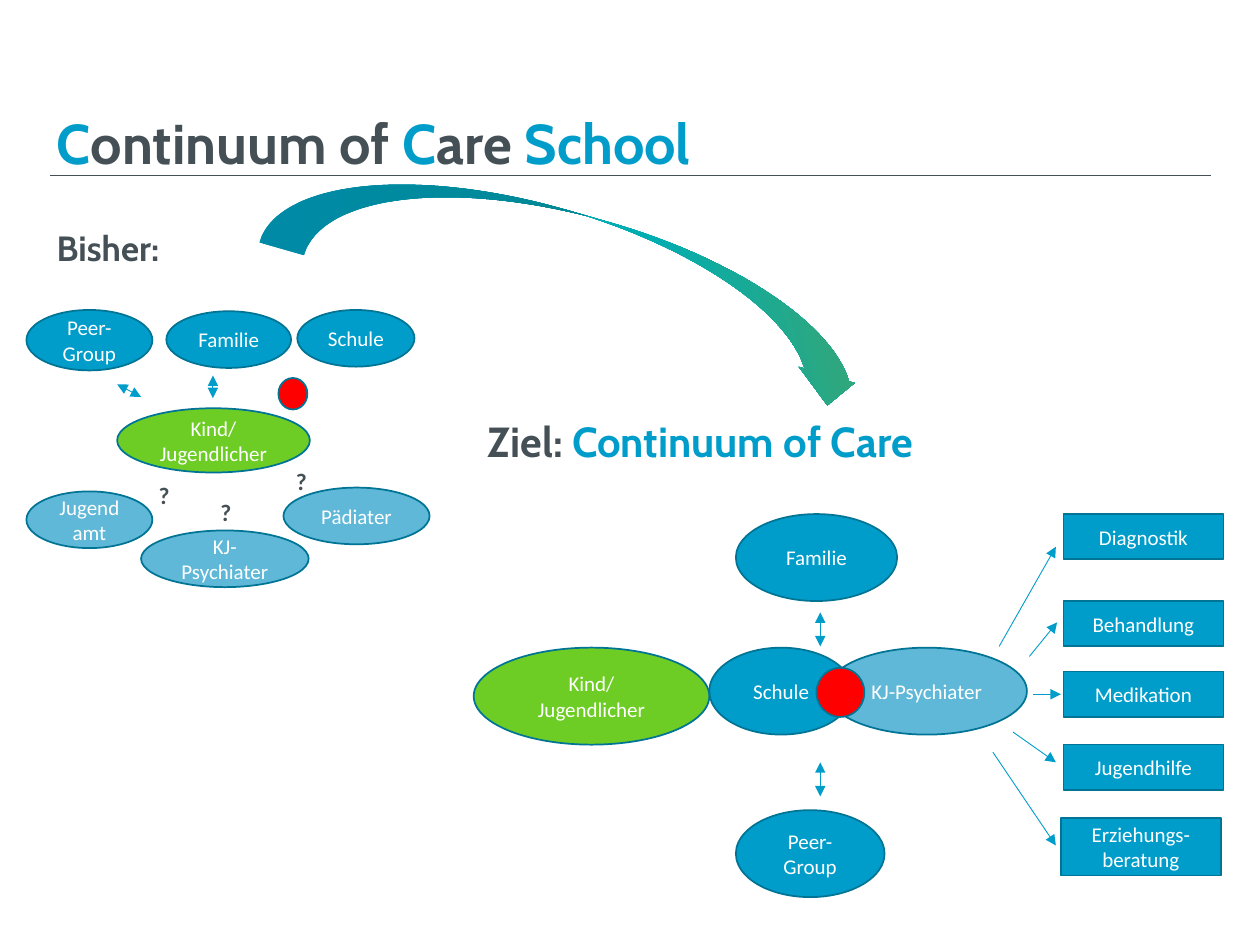
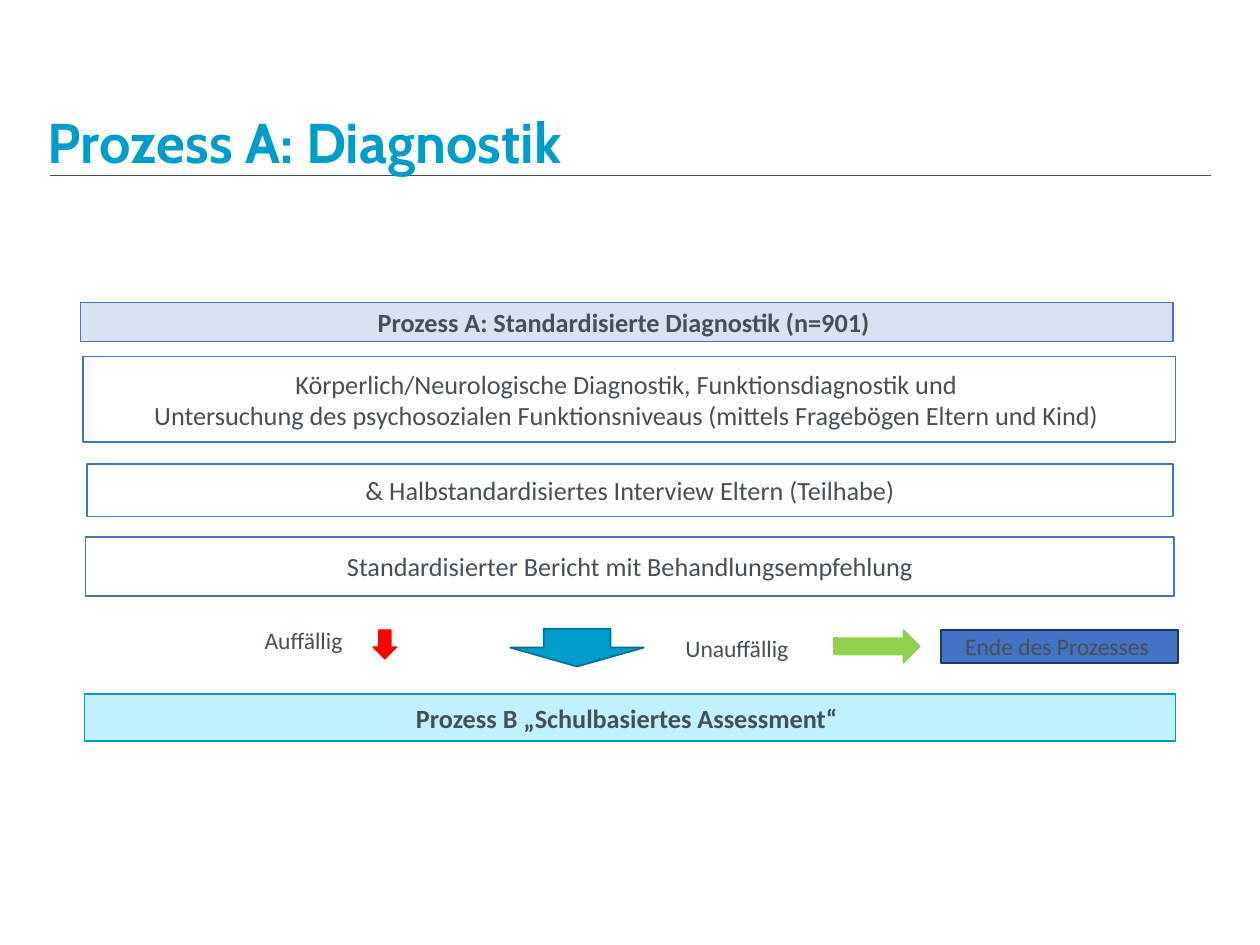
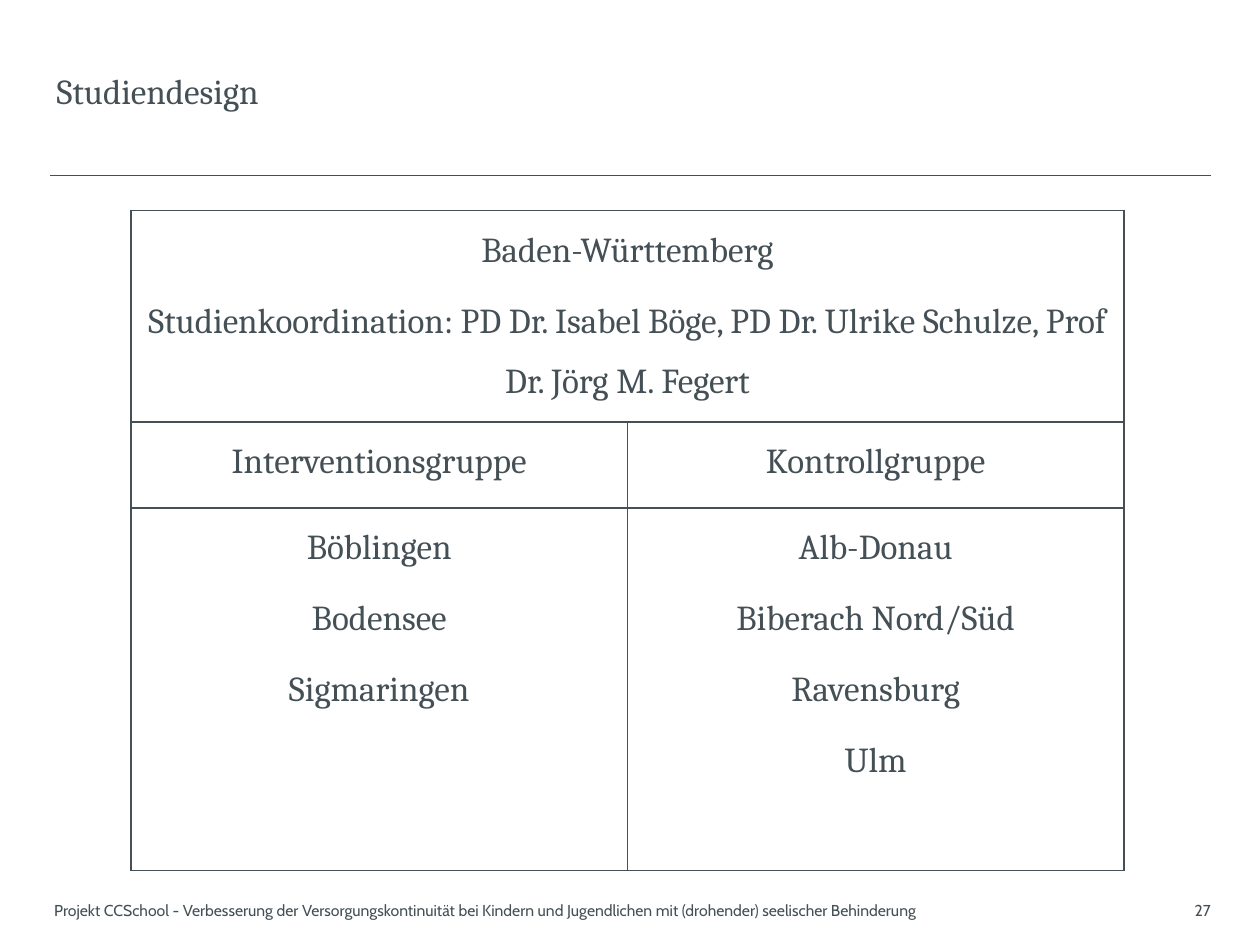
from lxml.etree import SubElement
from pptx import Presentation
from pptx.dml.color import RGBColor
from pptx.enum.shapes import MSO_CONNECTOR, MSO_SHAPE
from pptx.enum.text import MSO_ANCHOR, PP_ALIGN
from pptx.oxml.ns import qn
from pptx.util import Inches, Pt

COLORS = {
    "ink": "445055", "blue": "009DCA", "edge": "007495", "sky": "5FB8D7",
    "green": "6DCD25", "red": "FF0000", "white": "FFFFFF", "royal": "4472C4",
    "navy": "1F3763", "pale": "D9E2F3", "ice": "C1F1FF", "lime": "92D050",
}
SWEEP = [(0, "00ADD4"), (39, "00ADC3"), (62, "00ADB1"), (86, "31A77C"), (100, "61A047")]
HEAD, BODY, SERIF = "Cabin", "Calibri", "Cambria"
PAD = (0.1, 0.05, 0.1, 0.05)
FLUSH = (0, 0.05, 0, 0.05)
SNUG = (0.07, 0.04, 0.07, 0.04)
CELL = (0.07, 0, 0.07, 0)


def rgb(name):
    return RGBColor.from_string(COLORS[name])


class Deck:
    """Holds the shared style and the current slide."""

    def __init__(self):
        self.prs = Presentation()
        self.prs.slide_width, self.prs.slide_height = Inches(10), Inches(7.5)
        self.slide = None

    def new_slide(self):
        self.slide = self.prs.slides.add_slide(self.prs.slide_layouts[6])
        self.line((0.4, 1.39), (9.61, 1.39), "ink")

    def add_paras(self, tf, paras, size, font=BODY, color="ink", bold=False,
                  align=PP_ALIGN.LEFT, spacing=None, gap=0):
        for i, para in enumerate(paras):
            p = tf.paragraphs[0] if i == 0 else tf.add_paragraph()
            p.alignment = align
            if spacing:
                p.line_spacing = spacing
            if gap:
                p.space_after = Pt(gap)
                if i:
                    p.space_before = Pt(gap)
            for text, tint in [(para, color)] if isinstance(para, str) else para:
                r = p.add_run()
                r.text = text
                r.font.size, r.font.name, r.font.bold = Pt(size), font, bold
                r.font.color.rgb = rgb(tint)

    def frame(self, tf, inset, anchor):
        tf.word_wrap = True
        tf.vertical_anchor = anchor
        tf.margin_left, tf.margin_top, tf.margin_right, tf.margin_bottom = map(Inches, inset)

    def text(self, box, paras, size, inset=FLUSH, anchor=MSO_ANCHOR.TOP, **style):
        tf = self.slide.shapes.add_textbox(*map(Inches, box)).text_frame
        self.frame(tf, inset, anchor)
        self.add_paras(tf, paras, size, **style)

    def shape(self, kind, box, fill, edge=None, paras=(), size=12, inset=PAD,
              anchor=MSO_ANCHOR.MIDDLE, weight=1, align=PP_ALIGN.CENTER, **style):
        sp = self.slide.shapes.add_shape(kind, *map(Inches, box))
        sp.shadow.inherit = False
        sp.fill.solid()
        sp.fill.fore_color.rgb = rgb(fill)
        if edge:
            sp.line.color.rgb, sp.line.width = rgb(edge), Pt(weight)
        else:
            sp.line.fill.background()
        self.frame(sp.text_frame, inset, anchor)
        self.add_paras(sp.text_frame, paras, size, align=align, **style)
        return sp

    def node(self, box, fill, *paras, kind=MSO_SHAPE.OVAL):
        self.shape(kind, box, fill, "edge", paras, color="white")

    def step(self, box, fill, edge, *paras, size=15, bold=False):
        self.shape(MSO_SHAPE.FLOWCHART_PROCESS, box, fill, edge, paras, size, SNUG, bold=bold)

    def line(self, start, end, color="blue", ends=()):
        ln = self.slide.shapes.add_connector(
            MSO_CONNECTOR.STRAIGHT, *map(Inches, (*start, *end)))
        ln.line.color.rgb, ln.line.width = rgb(color), Pt(0.5)
        spPr = ln._element.spPr
        for end_tag in ends:
            SubElement(spPr.find(qn("a:ln")), qn(f"a:{end_tag}"), type="triangle")
        SubElement(spPr, qn("a:effectLst"))

    def arrow(self, start, end):
        self.line(start, end, ends=("tailEnd",))

    def double_arrow(self, start, end):
        self.line(start, end, ends=("headEnd", "tailEnd"))

    def sweep(self, box, rotation, adjustments):
        sp = self.shape(MSO_SHAPE.CURVED_DOWN_ARROW, box, "blue")
        sp.rotation = rotation
        for i, value in enumerate(adjustments):
            sp.adjustments[i] = value
        sp.fill.gradient()
        sp.fill.gradient_angle = 30
        stops = sp._element.spPr.find(".//" + qn("a:gsLst"))
        for gs in list(stops):
            stops.remove(gs)
        for pos, tint in SWEEP:
            gs = SubElement(stops, qn("a:gs"), pos=str(pos * 1000))
            SubElement(gs, qn("a:srgbClr"), val=tint)

    def border(self, cell):
        tcPr = cell._tc.get_or_add_tcPr()
        for side in ("lnL", "lnR", "lnT", "lnB"):
            ln = SubElement(tcPr, qn(f"a:{side}"), w=str(int(Pt(1))))
            fill = SubElement(ln, qn("a:solidFill"))
            SubElement(fill, qn("a:srgbClr"), val=COLORS["ink"])

    def table(self, box, widths, heights, rows):
        table = self.slide.shapes.add_table(
            len(heights), len(widths), *map(Inches, box)).table
        table.first_row = table.horz_banding = False
        for col, width in zip(table.columns, widths):
            col.width = Inches(width)
        for row, height in zip(table.rows, heights):
            row.height = Inches(height)
        for cell in table.iter_cells():
            self.border(cell)
            cell.fill.background()
        for r, row in enumerate(rows):
            if len(row) < len(widths):
                table.cell(r, 0).merge(table.cell(r, len(widths) - 1))
            for c, paras in enumerate(row):
                cell = table.cell(r, c)
                cell.margin_left, cell.margin_top, cell.margin_right, cell.margin_bottom = map(
                    Inches, CELL)
                self.add_paras(cell.text_frame, paras, 20, SERIF, align=PP_ALIGN.CENTER,
                               spacing=1.5, gap=3)

    def footer(self, text, number):
        self.text((0.43, 7.1, 7.71, 0.25), [text], 9, (0, 0.05, 0.1, 0.05),
                  MSO_ANCHOR.MIDDLE, font=HEAD)
        self.text((8.23, 7.1, 1.38, 0.25), [number], 9, (0.1, 0.05, 0, 0.05),
                  MSO_ANCHOR.MIDDLE, font=HEAD, align=PP_ALIGN.RIGHT)


def continuum(d):
    d.new_slide()
    d.text((0.45, 1.75, 1.01, 0.56), ["Bisher:"], 20, font=HEAD, bold=True)
    d.text((0.45, 0.81, 5.91, 0.36),
           [[("C", "blue"), ("ontinuum of ", "ink"), ("C", "blue"), ("are ", "ink"),
             ("School", "blue")]], 32, font=HEAD, bold=True)

    child = ("Kind/", "Jugendlicher")
    d.node((0.93, 3.24, 1.53, 0.51), "green", *child)
    for box, fill, label in [
        ((1.12, 4.21, 1.33, 0.45), "sky", "KJ-Psychiater"),
        ((0.21, 2.46, 1, 0.48), "blue", "Peer-Group"),
        ((1.32, 2.47, 0.99, 0.45), "blue", "Familie"),
        ((2.25, 3.87, 1.16, 0.45), "sky", "Pädiater"),
        ((2.36, 2.46, 0.93, 0.45), "blue", "Schule"),
        ((0.21, 3.9, 1, 0.45), "sky", "Jugendamt"),
    ]:
        d.node(box, fill, label)
    d.double_arrow((0.93, 3.05), (1.12, 3.15))
    d.double_arrow((1.69, 2.98), (1.69, 3.16))
    for x, y in [(1.16, 3.77), (1.65, 3.9), (2.25, 3.66)]:
        d.text((x, y, 0.21, 0.33), ["?"], 13.5, PAD, bold=True)
    d.node((2.21, 3, 0.23, 0.25), "red")

    d.node((3.76, 5.14, 1.87, 0.77), "green", *child)
    for x, y, width, fill, label in [
        (5.63, 5.14, 1.14, "blue", "Schule"),
        (5.84, 4.08, 1.28, "blue", "Familie"),
        (5.84, 6.43, 1.18, "blue", "Peer-Group"),
        (6.56, 5.14, 1.59, "sky", "KJ-Psychiater"),
    ]:
        d.node((x, y, width, 0.69), fill, label)
    for y in (4.86, 6.05):
        d.double_arrow((6.51, y), (6.51, y + 0.27))
    d.node((6.48, 5.3, 0.38, 0.39), "red")

    for x, y, height, label, start, end in [
        (8.44, 4.08, 0.36, "Diagnostik", (7.93, 5.13), (8.38, 4.34)),
        (8.44, 4.77, 0.36, "Behandlung", (8.17, 5.21), (8.39, 4.94)),
        (8.44, 5.33, 0.36, "Medikation", (8.2, 5.51), (8.42, 5.51)),
        (8.44, 5.91, 0.36, "Jugendhilfe", (8.04, 5.81), (8.38, 6.05)),
        (8.42, 6.49, 0.46, "Erziehungs-beratung", (7.88, 5.97), (8.38, 6.71)),
    ]:
        d.node((x, y, 1.27, height), "blue", label, kind=MSO_SHAPE.RECTANGLE)
        d.arrow(start, end)
    d.text((3.87, 3.25, 3.54, 0.36), [[("Ziel: ", "ink"), ("Continuum of Care", "blue")]],
           24, font=HEAD, bold=True)
    d.sweep((2.09, 1.7, 4.92, 0.92), 16, (0.4, 0.5, 0.25))


def diagnostics(d):
    d.new_slide()
    d.text((0.38, 0.61, 7.17, 0.83), ["Prozess A: Diagnostik"], 32, anchor=MSO_ANCHOR.BOTTOM,
           font=HEAD, color="blue", bold=True, spacing=0.9)
    d.step((0.64, 2.4, 8.67, 0.31), "pale", "royal",
           "Prozess A: Standardisierte Diagnostik (n=901) ", bold=True)
    d.step((0.66, 2.83, 8.67, 0.68), "white", "royal",
           "Körperlich/Neurologische Diagnostik, Funktionsdiagnostik und ",
           "Untersuchung des psychosozialen Funktionsniveaus (mittels Fragebögen Eltern und Kind) ")
    d.step((0.69, 3.68, 8.62, 0.42), "white", "royal",
           "& Halbstandardisiertes Interview Eltern (Teilhabe)")
    d.step((0.68, 4.26, 8.64, 0.47), "white", "royal",
           "Standardisierter Bericht mit Behandlungsempfehlung")
    d.shape(MSO_SHAPE.STRIPED_RIGHT_ARROW, (6.62, 5, 0.68, 0.26), "lime", "lime")
    for box, label in [((5.37, 4.99, 1.08, 0.23), "Unauffällig"),
                       ((2.03, 4.93, 1.08, 0.3), "Auffällig")]:
        d.shape(MSO_SHAPE.RECTANGLE, box, "white", None, [label], 13.5, SNUG,
                MSO_ANCHOR.TOP, align=PP_ALIGN.LEFT)
    d.step((7.47, 5, 1.88, 0.26), "royal", "navy", "Ende des Prozesses ", size=13.5)
    d.shape(MSO_SHAPE.DOWN_ARROW, (2.96, 5, 0.19, 0.23), "red", "red", weight=0.75)
    d.step((0.67, 5.51, 8.66, 0.37), "ice", "blue",
           "Prozess B „Schulbasiertes Assessment“ ", bold=True)
    d.shape(MSO_SHAPE.DOWN_ARROW, (4.05, 4.99, 1.06, 0.3), "blue", "edge")


def study_design(d):
    d.new_slide()
    d.text((0.45, 0.36, 5.91, 0.72), ["Studiendesign"], 20, anchor=MSO_ANCHOR.MIDDLE, font=SERIF)
    d.footer("Projekt CCSchool - Verbesserung der Versorgungskontinuität bei Kindern und "
             "Jugendlichen mit (drohender) seelischer Behinderung", "27")
    d.table((1.04, 1.67, 7.88, 5.24), (3.94, 3.94), (1.68, 0.68, 2.88), [
        [["Baden-Württemberg",
          "Studienkoordination: PD Dr. Isabel Böge, PD Dr. Ulrike Schulze, "
          "Prof Dr. Jörg M. Fegert"]],
        [["Interventionsgruppe"], ["Kontrollgruppe"]],
        [["Böblingen", "Bodensee", "Sigmaringen"],
         ["Alb-Donau", "Biberach Nord/Süd", "Ravensburg", "Ulm"]],
    ])


def main():
    d = Deck()
    continuum(d)
    diagnostics(d)
    study_design(d)
    d.prs.save("out.pptx")


if __name__ == "__main__":
    main()
